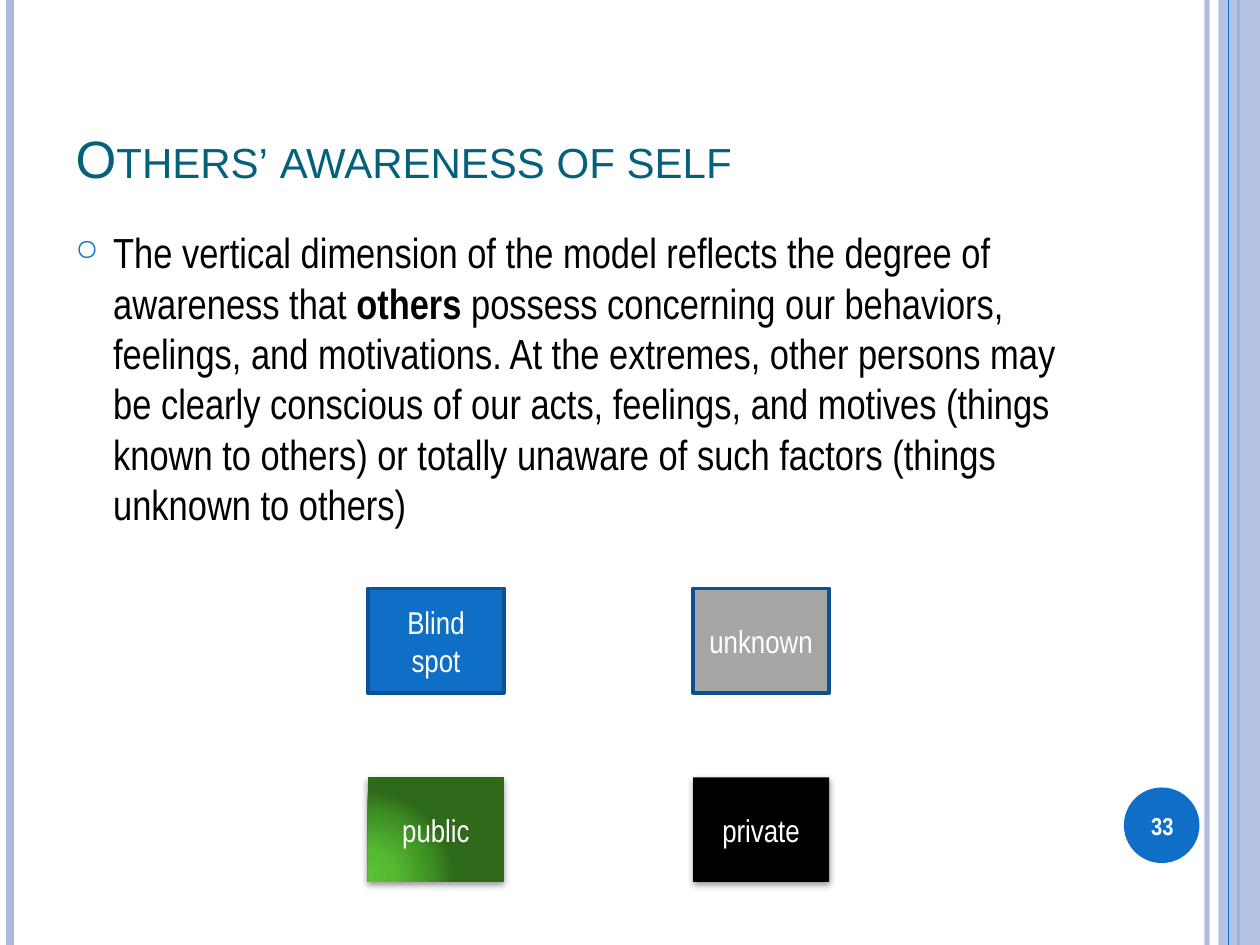
from lxml.etree import SubElement
from pptx import Presentation
from pptx.dml.color import RGBColor
from pptx.enum.shapes import MSO_CONNECTOR as Link, MSO_SHAPE as Shape
from pptx.enum.text import MSO_ANCHOR as Anchor, PP_ALIGN as Align
from pptx.oxml import parse_xml
from pptx.oxml.ns import nsdecls, qn
from pptx.util import Inches, Pt

COLORS = {
    "pale": "ABBBDF", "blue": "0F6FC6", "edge": "0B5292", "title": "04617B",
    "gray": "A6A6A6", "black": "000000", "white": "FFFFFF",
}
GREENS = [(0, "58C135"), (30, "55BA33"), (75, "3E8F23"), (100, "2E6A1A")]
HEADING, BODY = "Arial", "Arial Narrow"
WIDTH, HEIGHT = 10, 7.5


def color(name):
    return RGBColor.from_string(COLORS[name])


def inches(box):
    return [Inches(length) for length in box]


def add_run(paragraph, words, size, font, shade, bold=False):
    run = paragraph.add_run()
    run.text = words
    run.font.size, run.font.name, run.font.bold = Pt(size), font, bold
    run.font.color.rgb = color(shade)
    return run


def set_alpha(color_parent, percent):
    SubElement(color_parent.find(".//" + qn("a:srgbClr")), qn("a:alpha"),
               val=str(percent * 1000))


def add_solid(slide, kind, box, fill):
    solid = slide.shapes.add_shape(kind, *inches(box))
    solid.shadow.inherit = False
    solid.fill.solid()
    solid.fill.fore_color.rgb = color(fill)
    solid.line.fill.background()
    return solid


def add_rule(slide, x, shade, weight, alpha=None):
    rule = slide.shapes.add_connector(
        Link.STRAIGHT, *inches((x, 0, x, HEIGHT)))
    rule.line.color.rgb = color(shade)
    rule.line.width = Pt(weight)
    properties = rule._element.spPr
    if alpha:
        set_alpha(properties, alpha)
    SubElement(properties, qn("a:effectLst"))


def add_frame(slide, band_left):
    """Vertical rules at both edges and the band on the right."""
    add_rule(slide, band_left - 0.09, "pale", 3, 93)
    add_rule(slide, 0.08, "pale", 4.5)
    add_rule(slide, band_left + 0.16, "blue", 1.5)
    band = add_solid(slide, Shape.RECTANGLE,
                     (band_left, 0, WIDTH - band_left, HEIGHT), "pale")
    set_alpha(band._element.spPr, 87)
    add_rule(slide, band_left + 0.08, "blue", 0.75)


def add_page_number(slide, box, number):
    left, top, width, height = box
    add_solid(slide, Shape.OVAL, box, "blue")
    label = slide.shapes.add_textbox(
        *inches((left - 0.03, top + 0.02, width + 0.07, height - 0.03)))
    frame = label.text_frame
    frame.word_wrap = True
    frame.vertical_anchor = Anchor.MIDDLE
    frame.paragraphs[0].alignment = Align.CENTER
    add_run(frame.paragraphs[0], number, 14, BODY, "white", bold=True)


def add_title(slide, box, words):
    title = slide.shapes.title
    title.left, title.top, title.width, title.height = inches(box)
    frame = title.text_frame
    frame.vertical_anchor = Anchor.BOTTOM
    frame.paragraphs[0].alignment = Align.LEFT
    run = add_run(frame.paragraphs[0], words, 30, HEADING, "title")
    run.font._element.set("cap", "small")


def add_bullet(slide, box, pieces):
    """One bulleted paragraph from (words, bold) pieces."""
    frame = slide.shapes.add_textbox(*inches(box)).text_frame
    frame.word_wrap = True
    paragraph = frame.paragraphs[0]
    paragraph.space_before = Pt(6)
    properties = paragraph._p.get_or_add_pPr()
    properties.set("marL", str(Inches(0.3)))
    properties.set("indent", str(-Inches(0.3)))
    bullet_color = SubElement(properties, qn("a:buClr"))
    SubElement(bullet_color, qn("a:srgbClr"), val=COLORS["blue"])
    SubElement(properties, qn("a:buSzPct"), val="70000")
    SubElement(properties, qn("a:buChar"), char="○")
    for words, bold in pieces:
        add_run(paragraph, words, 24, BODY, "black", bold)


def add_glow(pane):
    """Green light spreading from the lower left corner."""
    stops = "".join(
        f'<a:gs pos="{at * 1000}"><a:srgbClr val="{green}"/></a:gs>'
        for at, green in GREENS)
    properties = pane._element.spPr
    solid = properties.find(qn("a:solidFill"))
    properties.replace(solid, parse_xml(
        f'<a:gradFill {nsdecls("a")} rotWithShape="1"><a:gsLst>{stops}</a:gsLst>'
        '<a:path path="circle"><a:fillToRect l="5000" t="100000" r="120000" '
        'b="10000"/></a:path></a:gradFill>'))


def add_drop_shadow(pane):
    effects = pane._element.spPr.find(qn("a:effectLst"))
    shadow = SubElement(effects, qn("a:outerShdw"), blurRad=str(Pt(4)),
                        dist=str(Pt(1.6)), dir="5400000", rotWithShape="0")
    SubElement(shadow, qn("a:srgbClr"), val=COLORS["black"])
    set_alpha(effects, 42)


def add_window(slide, box, rows):
    """Four panes of (words, fill, outlined) in the corners of the box."""
    left, top, width, height = box
    pane_width, pane_height = 1.08, 0.83
    for row, panes in enumerate(rows):
        for column, (words, fill, outlined) in enumerate(panes):
            pane = add_solid(slide, Shape.RECTANGLE, (
                left + column * (width - pane_width),
                top + row * (height - pane_height),
                pane_width, pane_height), "black" if fill == "glow" else fill)
            if fill == "glow":
                add_glow(pane)
            if outlined:
                pane.line.color.rgb = color("edge")
                pane.line.width = Pt(2)
            else:
                add_drop_shadow(pane)
            frame = pane.text_frame
            frame.word_wrap = True
            frame.vertical_anchor = Anchor.MIDDLE
            frame.paragraphs[0].alignment = Align.CENTER
            add_run(frame.paragraphs[0], words, 18, BODY, "white")


def main():
    deck = Presentation()
    deck.slide_width, deck.slide_height = inches((WIDTH, HEIGHT))
    slide = deck.slides.add_slide(deck.slide_layouts[5])

    add_frame(slide, 9.67)
    margin, text_width = 0.05 * WIDTH, 8.17
    add_title(slide, (margin, 0.3, text_width, 1.25), "Others’ awareness of self")
    add_bullet(slide, (margin, 1.75, text_width, 5.33), [
        ("The vertical dimension of the model reflects the degree of "
         "awareness that ", False),
        ("others", True),
        (" possess concerning our behaviors, feelings, and motivations. At the "
         "extremes, other persons may be clearly conscious of our acts, "
         "feelings, and motives (things known to others) or totally unaware of "
         "such factors (things unknown to others)", False),
    ])
    add_page_number(slide, (8.92, 6.25, 0.6, 0.6), "33")
    add_window(slide, (2.92, 4.67, 3.66, 2.33), [
        [("Blind spot", "blue", True), ("unknown", "gray", True)],
        [("public", "glow", False), ("private", "black", False)],
    ])
    deck.save("out.pptx")


if __name__ == "__main__":
    main()
